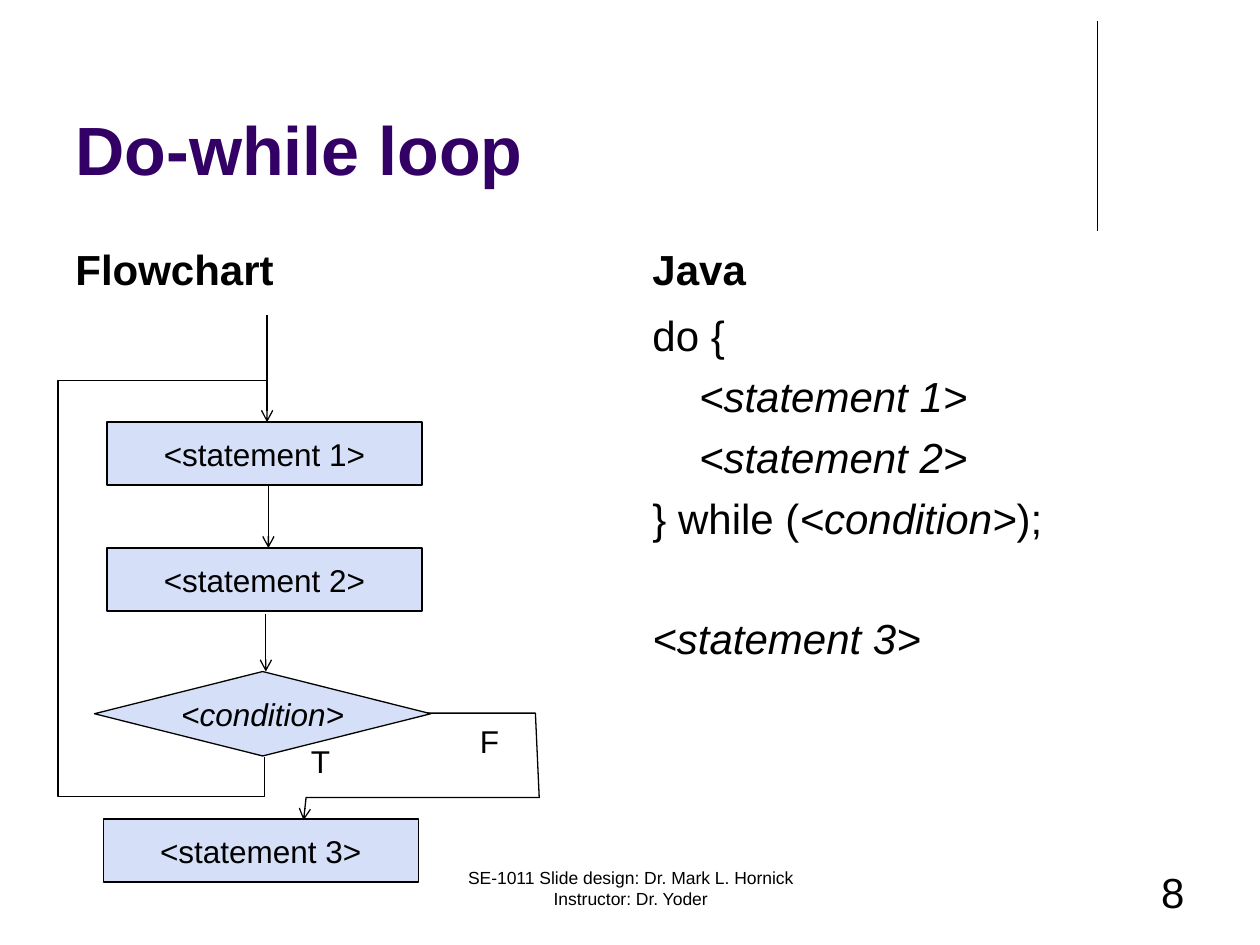
from typing import NamedTuple

import pptx
import pptx.dml.color
import pptx.enum.shapes
import pptx.enum.text
import pptx.oxml
import pptx.oxml.ns
import pptx.util

COLORS = {"ink": "000000", "title": "330066", "node": "D5DFF7"}
FONT = "Arial"
LINE_WIDTH = 0.75

# The page is a grid of 10 columns by 7.5 rows; all places are in grid units.
COLUMNS, ROWS = 10, 7.5
deck = pptx.Presentation()
deck.slide_width = pptx.util.Inches(10)
deck.slide_height = pptx.util.Inches(7.5)
COLUMN = deck.slide_width / COLUMNS
ROW = deck.slide_height / ROWS

Shapes = pptx.enum.shapes.MSO_SHAPE
Align = pptx.enum.text.PP_ALIGN
Anchor = pptx.enum.text.MSO_ANCHOR
Point = tuple[float, float]


class Area(NamedTuple):
    left: float
    top: float
    width: float
    height: float


class Node(NamedTuple):
    text: str
    area: Area
    kind: Shapes = Shapes.RECTANGLE
    italic: bool = False


class Route(NamedTuple):
    points: list[Point]
    arrow: bool


class CodeLine(NamedTuple):
    spans: list[tuple[str, bool]]  # text, italic
    space_before: float = 6


LEFT_HEADING = Area(0.5, 1.68, 4.42, 0.7)
RIGHT_HEADING = LEFT_HEADING._replace(left=5.08)
CODE_AREA = Area(RIGHT_HEADING.left, 2.41, RIGHT_HEADING.width, 4.32)
STEP = Area(0.85, 3.35, 2.5, 0.5)

NODES = [
    Node("<statement 1>", STEP),
    Node("<statement 2>", STEP._replace(top=STEP.top + 1)),
    Node("<condition>", Area(0.75, 5.33, 2.67, 0.67), Shapes.FLOWCHART_DECISION, True),
    Node("<statement 3>", STEP._replace(left=0.82, top=6.5)),
]
ARROWS = [
    ((2.12, 2.5), (2.12, 3.35)),
    ((2.13, 3.85), (2.13, 4.35)),
    ((2.11, 4.87), (2.11, 5.33)),
]
ROUTES = [
    Route([(3.39, 5.66), (4.25, 5.66), (4.28, 6.33), (2.43, 6.33), (2.41, 6.51)], True),
    Route([(2.1, 6.01), (2.1, 6.32), (0.46, 6.32), (0.46, 3.02), (2.11, 3.02)], False),
]
BRANCH_LABELS = {"T": Area(2.37, 5.84, 0.36, 0.4), "F": Area(3.71, 5.68, 0.36, 0.4)}
CODE = [
    CodeLine([("do {", False)], 0),
    CodeLine([("    <statement 1>", True)]),
    CodeLine([("    <statement 2>", True)]),
    CodeLine([("} while (", False), ("<condition>", True), (");", False)]),
    CodeLine([("<statement 3>", True)], 39.6),
]


def color(name: str) -> pptx.dml.color.RGBColor:
    return pptx.dml.color.RGBColor.from_string(COLORS[name])


def on_page(x: float, y: float) -> tuple[int, int]:
    return round(x * COLUMN), round(y * ROW)


def place(shape, area: Area) -> None:
    shape.left, shape.top = on_page(area.left, area.top)
    shape.width, shape.height = on_page(area.width, area.height)


def add_span(para, text: str, *, size: float, bold=False, italic=False, ink="ink") -> None:
    span = para.add_run()
    span.text = text
    font = span.font
    font.name, font.size = FONT, pptx.util.Pt(size)
    font.bold, font.italic = bold, italic
    font.color.rgb = color(ink)


def write(shape, text: str, *, align=Align.LEFT, anchor=Anchor.TOP, wrap=True, **style) -> None:
    frame = shape.text_frame
    frame.word_wrap, frame.vertical_anchor = wrap, anchor
    frame.auto_size = pptx.enum.text.MSO_AUTO_SIZE.NONE
    para = frame.paragraphs[0]
    para.alignment = align
    add_span(para, text, **style)


def add_text(page, area: Area, text: str, **style) -> None:
    box = page.shapes.add_textbox(*on_page(*area[:2]), *on_page(*area[2:]))
    write(box, text, **style)


def style_line(shape, arrow: bool) -> None:
    shape.line.color.rgb = color("ink")
    shape.line.width = pptx.util.Pt(LINE_WIDTH)
    if arrow:
        line = shape.line._get_or_add_ln()
        pptx.oxml.ns.qn("a:tailEnd")
        line.append(pptx.oxml.parse_xml(
            f'<a:tailEnd {pptx.oxml.ns.nsdecls("a")} type="arrow"/>'))


def add_line(page, start: Point, end: Point, arrow: bool = False) -> None:
    line = page.shapes.add_connector(
        pptx.enum.shapes.MSO_CONNECTOR.STRAIGHT, *on_page(*start), *on_page(*end))
    style_line(line, arrow)
    line._element.spPr.append(pptx.oxml.parse_xml(
        f'<a:effectLst {pptx.oxml.ns.nsdecls("a")}/>'))


def add_route(page, route: Route) -> None:
    first, *rest = [on_page(*point) for point in route.points]
    builder = page.shapes.build_freeform(*first)
    builder.add_line_segments(rest, close=False)
    shape = builder.convert_to_shape()
    shape.shadow.inherit = False
    shape.fill.background()
    style_line(shape, route.arrow)


def add_node(page, node: Node) -> None:
    shape = page.shapes.add_shape(
        node.kind, *on_page(*node.area[:2]), *on_page(*node.area[2:]))
    shape.shadow.inherit = False
    shape.fill.solid()
    shape.fill.fore_color.rgb = color("node")
    style_line(shape, arrow=False)
    write(shape, node.text, size=18, italic=node.italic,
          align=Align.CENTER, anchor=Anchor.MIDDLE, wrap=False)


def add_code(page, area: Area, lines: list[CodeLine]) -> None:
    box = page.shapes.add_textbox(*on_page(*area[:2]), *on_page(*area[2:]))
    frame = box.text_frame
    frame.word_wrap = True
    for index, line in enumerate(lines):
        para = frame.add_paragraph() if index else frame.paragraphs[0]
        para.space_before = pptx.util.Pt(line.space_before)
        for text, italic in line.spans:
            add_span(para, text, size=24, italic=italic)


def main() -> None:
    page = deck.slides.add_slide(deck.slide_layouts.get_by_name("Title Only"))
    add_line(page, (8.71, 0.17), (8.71, 1.83))
    title = page.shapes.title
    place(title, Area(0.5, 0.3, 9, 1.25))
    write(title, "Do-while loop", size=39, bold=True, ink="title", anchor=Anchor.BOTTOM)

    for text, area in (("Flowchart", LEFT_HEADING), ("Java", RIGHT_HEADING)):
        add_text(page, area, text, size=24, bold=True, anchor=Anchor.BOTTOM)
    add_code(page, CODE_AREA, CODE)

    for node in NODES:
        add_node(page, node)
    for start, end in ARROWS:
        add_line(page, start, end, arrow=True)
    for route in ROUTES:
        add_route(page, route)
    for text, area in BRANCH_LABELS.items():
        add_text(page, area, text, size=18, wrap=False)

    add_text(page, Area(3.42, 6.83, 3.17, 0.5),
             "SE-1011 Slide design: Dr. Mark L. Hornick Instructor: Dr. Yoder",
             size=10, align=Align.CENTER)
    add_text(page, Area(7.17, 6.83, 2.33, 0.5), "8", size=24, align=Align.RIGHT)
    deck.save("out.pptx")


if __name__ == "__main__":
    main()
